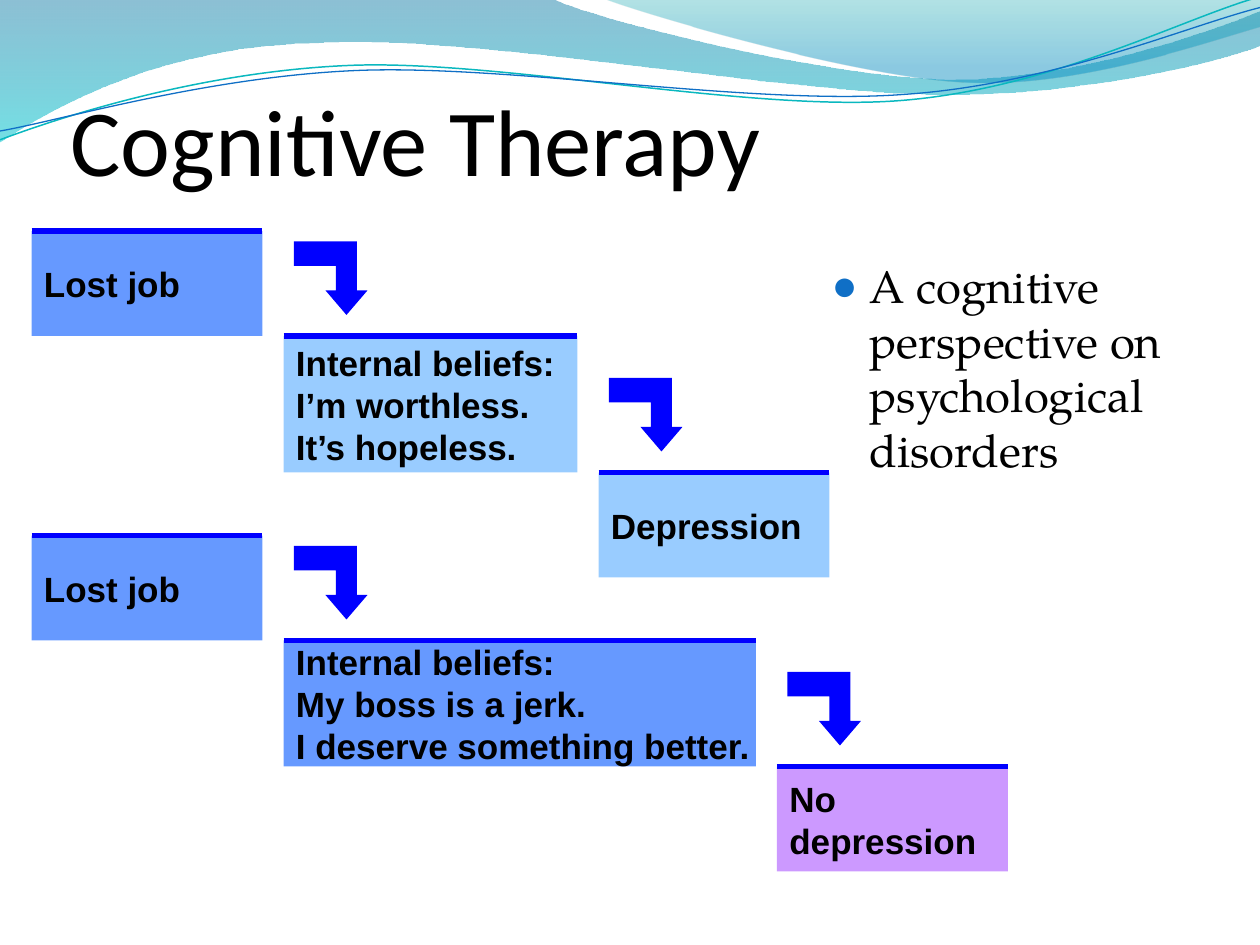
from lxml import etree
from pptx import Presentation
from pptx import util as u
from pptx.dml.color import RGBColor
from pptx.enum import shapes, text
from pptx.oxml.ns import qn

COLORS = {
    "black": "000000", "edge": "0000FF", "bullet": "0F6FC6",
    "blue": "6699FF", "sky": "99CCFF", "violet": "CC99FF",
    "deep": "0074A1", "aqua": "00C6CF", "teal": "00A1A9", "sea": "008BBF",
    "thin teal": "0AB8BF", "thin blue": "0F6FC6",
}
RGB = {name: RGBColor.from_string(value) for name, value in COLORS.items()}
CELL = u.Inches(1) // 12  # the diagram sits on a grid of twelfths of an inch


def write(frame, lines, font, size, bold=False, anchor=text.MSO_ANCHOR.TOP, wrap=True):
    """Put one left-aligned paragraph per line into a text frame."""
    frame.auto_size = text.MSO_AUTO_SIZE.NONE
    frame.word_wrap = wrap
    frame.vertical_anchor = anchor
    for number, line in enumerate(lines):
        para = frame.add_paragraph() if number else frame.paragraphs[0]
        para.alignment = text.PP_ALIGN.LEFT
        span = para.add_run()
        span.text = line
        span.font.name, span.font.size, span.font.bold = font, u.Pt(size), bold
        span.font.color.rgb = RGB["black"]


def draw_outline(page, segments, closed=True):
    """Draw points in inches; a segment of three points is a Bezier curve."""
    segments = [[(u.Inches(x), u.Inches(y)) for x, y in part] for part in segments]
    ends = [part[-1] for part in segments]
    builder = page.shapes.build_freeform(*ends[0])
    builder.add_line_segments(ends[1:], close=closed)
    shape = builder.convert_to_shape()
    shape.shadow.inherit = False
    strokes = list(shape._element.spPr.iter(qn("a:lnTo")))
    for stroke, part in zip(strokes, segments[1:]):
        if len(part) == 3:
            stroke.tag = qn("a:cubicBezTo")
            for place, (x, y) in enumerate(part[:2]):
                handle = etree.Element(qn("a:pt"), x=str(x - shape.left),
                                       y=str(y - shape.top))
                stroke.insert(place, handle)
    return shape


deck = Presentation()
deck.slide_width, deck.slide_height = u.Inches(10), u.Inches(7.5)
page = deck.slides.add_slide(deck.slide_layouts[1])

# Wave bands: outline, then gradient stops of position, colour and opacity in percent
bands = [
    ([[(0, 0)], [(4.4, 0)],
      [(4.76, 0.17), (6.64, 0.63), (7.58, 0.63)],
      [(8.53, 0.63), (9.58, 0.26), (10, 0.09)], [(10.01, 0.36)],
      [(9.83, 0.44), (8.7, 0.76), (7.46, 0.75)],
      [(6.22, 0.75), (3.82, 0.28), (2.57, 0.34)],
      [(1.29, 0.36), (0.46, 0.83), (-0.01, 1.13)]],
     [(0, "deep", 45), (100, "aqua", 55)]),
    ([[(4.79, -0.01)],
      [(5.09, 0.11), (6.82, 0.62), (7.69, 0.65)],
      [(8.56, 0.69), (9.61, 0.32), (10, 0.21)], [(10, 0)]],
     [(0, "teal", 30), (80, "sea", 45)]),
]
waves = []
for outline, stops in bands:
    band = draw_outline(page, outline)
    band.line.fill.background()
    band.fill.gradient()
    band.fill.gradient_angle = 270
    for stop, (position, color, _) in zip(band.fill.gradient_stops, stops):
        stop.position = position / 100
        stop.color.rgb = RGB[color]
    tints = band._element.spPr.iter(qn("a:srgbClr"))
    for tint, (_, _, opacity) in zip(tints, stops):
        etree.SubElement(tint, qn("a:alpha"), val=str(opacity * 1000))
    waves.append(band)

threads = [
    ([[(0, 1.11)],
      [(0.48, 0.93), (1.58, 0.57), (2.77, 0.52)],
      [(3.95, 0.47), (5.93, 0.89), (7.13, 0.8)],
      [(8.33, 0.71), (9.38, 0.15), (9.98, -0.02)]], "thin teal", 0.85),
    ([[(0, 1.04)],
      [(0.47, 0.96), (1.64, 0.61), (2.83, 0.56)],
      [(4.03, 0.51), (5.97, 0.84), (7.17, 0.75)],
      [(8.36, 0.67), (9.41, 0.21), (10, 0.06)]], "thin blue", 0.75),
]
for outline, color, width in threads:
    thread = draw_outline(page, outline, closed=False)
    thread.fill.background()
    thread.line.color.rgb, thread.line.width = RGB[color], u.Pt(width)
    waves.append(thread)

# The waves belong to the layout, behind its placeholders
for place, wave in enumerate(waves, start=2):
    page.slide_layout.shapes._spTree.insert(place, wave._element)

title, body = page.shapes.title, page.placeholders[1]
for holder, place in ((title, (0.56, 0.3, 8.09, 1.25)), (body, (6.5, 2, 3.67, 4.56))):
    holder.left, holder.top, holder.width, holder.height = map(u.Inches, place)

title.text_frame.margin_left = title.text_frame.margin_right = 0
title.text_frame.margin_bottom = 0
write(title.text_frame, ["Cognitive Therapy"], "Calibri", 54,
      anchor=text.MSO_ANCHOR.BOTTOM)
write(body.text_frame, ["A cognitive perspective on psychological disorders"],
      "TeX Gyre Pagella", 26)
props = body.text_frame.paragraphs[0]._p.get_or_add_pPr()
props.set("marL", str(u.Inches(0.3)))
props.set("indent", str(-u.Inches(0.3)))
bullet_color = etree.SubElement(props, qn("a:buClr"))
etree.SubElement(bullet_color, qn("a:srgbClr"), val=COLORS["bullet"])
etree.SubElement(props, qn("a:buSzPct"), val="95000")
etree.SubElement(props, qn("a:buChar"), char="●")

# Steps of the two chains: column, row, columns wide, rows high
steps = [
    (3, 22, 22, 10, "blue", ["Lost job"]),
    (27, 32, 28, 13, "sky", ["Internal beliefs:", "I’m worthless.", "It’s hopeless."]),
    (57, 45, 22, 10, "sky", ["Depression"]),
    (3, 51, 22, 10, "blue", ["Lost job"]),
    (27, 61, 45, 12, "blue",
     ["Internal beliefs:", "My boss is a jerk.", "I deserve something better."]),
    (74, 73, 22, 10, "violet", ["No", "depression"]),
]
for column, row, wide, high, color, lines in steps:
    left, top, width, height = (n * CELL for n in (column, row, wide, high))
    box = page.shapes.add_shape(shapes.MSO_SHAPE.RECTANGLE, left, top, width, height)
    box.shadow.inherit = False
    box.fill.solid()
    box.fill.fore_color.rgb = RGB[color]
    box.line.fill.background()
    write(box.text_frame, lines, "Arial", 20, bold=True,
          anchor=text.MSO_ANCHOR.MIDDLE, wrap=False)
    edge = page.shapes.add_connector(shapes.MSO_CONNECTOR.STRAIGHT,
                                     left, top, left + width, top)
    edge.line.color.rgb, edge.line.width = RGB["edge"], u.Pt(3)
    etree.SubElement(edge._element.spPr, qn("a:effectLst"))

# Bent arrows, seven cells square
bend, neck = 7 / 3, 14 / 3
arrow_outline = [(5, 7), (3, neck), (4, neck), (4, bend), (0, bend),
                 (0, 0), (6, 0), (6, neck), (7, neck)]
for column, row in ((28, 23), (58, 36), (28, 52), (75, 64)):
    arrow = draw_outline(page, [[((column + x) / 12, (row + y) / 12)]
                                for x, y in arrow_outline])
    arrow.fill.solid()
    arrow.fill.fore_color.rgb = RGB["edge"]
    arrow.line.fill.background()

deck.save("out.pptx")
